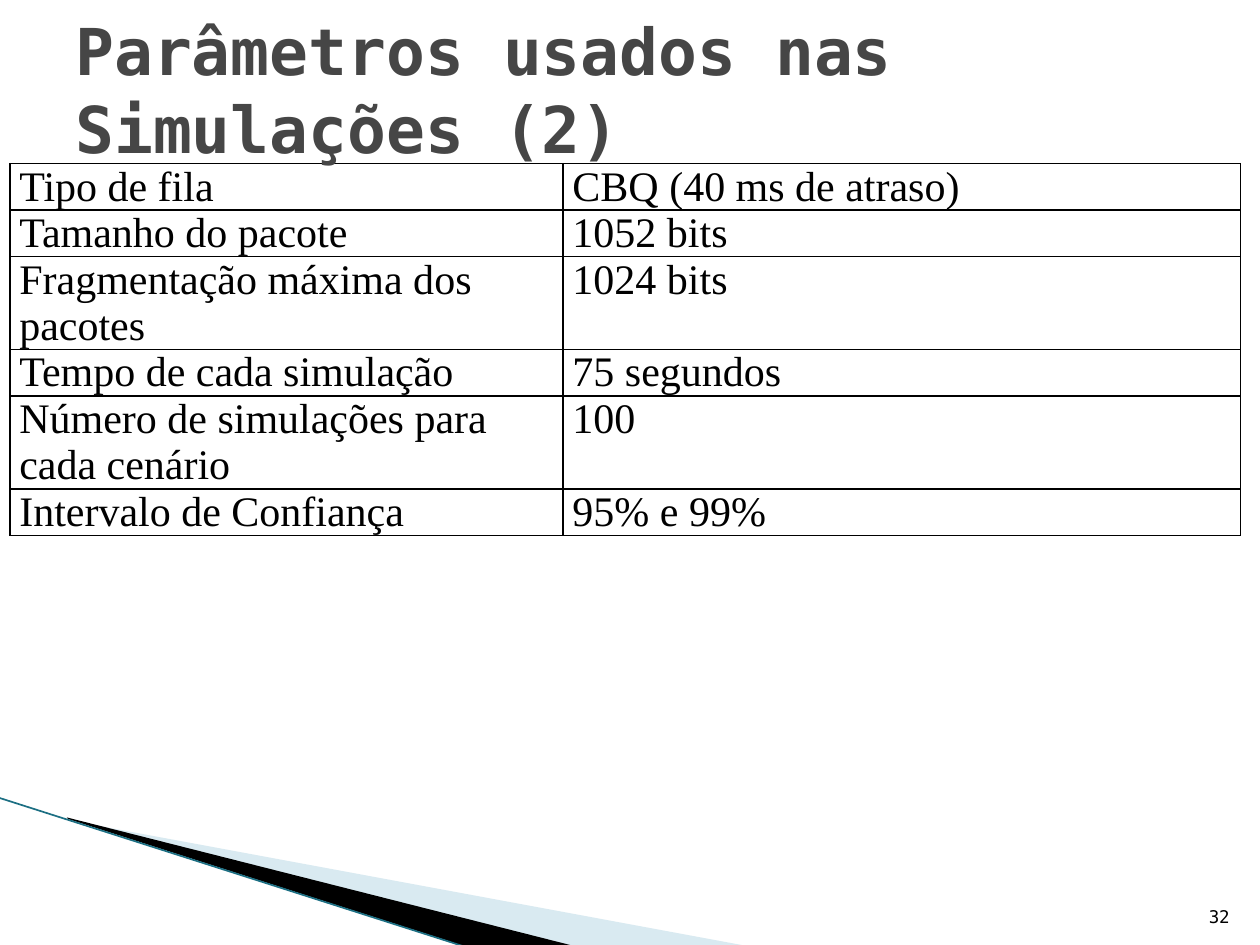
"""Build the slide listing the simulation parameters."""
import dataclasses

import pptx
import pptx.dml.color
import pptx.enum.shapes
import pptx.enum.text
import pptx.oxml
import pptx.oxml.ns
import pptx.util

Cm, Pt = pptx.util.Cm, pptx.util.Pt
RGB = pptx.dml.color.RGBColor.from_string
Anchor, Align = pptx.enum.text.MSO_ANCHOR, pptx.enum.text.PP_ALIGN
qn = pptx.oxml.ns.qn


@dataclasses.dataclass(frozen=True)
class Theme:
    black: str = "000000"
    white: str = "FFFFFF"
    heading: str = "464646"
    pale_blue: str = "A0CBDC"
    edge_teal: str = "1C6F83"
    mono: str = "DejaVu Sans Mono"
    serif: str = "Times New Roman"
    title_size: float = 36.9
    table_size: float = 24
    number_size: float = 10


theme = Theme()


def set_font(paragraph, name, size, color, bold=False):
    font = paragraph.runs[0].font
    font.name, font.size, font.bold = name, Pt(size), bold
    font.color.rgb = RGB(color)


def add_xml(parent, markup):
    namespace = pptx.oxml.ns.nsdecls("a")
    parent.append(pptx.oxml.parse_xml(markup.replace(" ", f" {namespace} ", 1)))


deck = pptx.Presentation()
deck.slide_width, deck.slide_height = Cm(25.4), Cm(19.05)
slide = deck.slides.add_slide(deck.slide_layouts[6])
slide.background.fill.solid()
slide.background.fill.fore_color.rgb = RGB(theme.white)

unit = Cm(0.01)
wedges = [
    (theme.pale_blue, 40, (198, 1389, 1057, 401),
     [(140, 1654), (1511, 1908), (1158, 1908), (140, 1651)]),
    (theme.black, 100, (-15, 1608, 1057, 234),
     [(135, 1648), (1161, 1908), (945, 1910), (137, 1651)]),
]
for color, opacity, (left, top, width, height), corners in wedges:
    outline = slide.shapes.build_freeform(*corners[0], scale=unit)
    outline.add_line_segments(corners[1:], close=True)
    wedge = outline.convert_to_shape()
    wedge.left, wedge.top = left * unit, top * unit
    wedge.width, wedge.height = width * unit, height * unit
    contour = wedge._element.find(".//" + qn("a:pathLst"))[0]
    contour.set("w", str(width))
    contour.set("h", str(height))
    for point, (x, y) in zip(contour.iter(qn("a:pt")), corners):
        point.set("x", str(x - left))
        point.set("y", str(y - top))
    wedge.shadow.inherit = False
    wedge.line.fill.background()
    wedge.fill.solid()
    wedge.fill.fore_color.rgb = RGB(color)
    if opacity < 100:
        tint = wedge.fill._xPr.find(".//" + qn("a:srgbClr"))
        add_xml(tint, f'<a:alpha val="{opacity * 1000}"/>')

edge = slide.shapes.add_connector(
    pptx.enum.shapes.MSO_CONNECTOR.STRAIGHT, Cm(-0.03), Cm(16.08), Cm(9.42), Cm(19.1))
edge.line.color.rgb = RGB(theme.edge_teal)
edge.line.width = Pt(0.95)
add_xml(edge._element.spPr, "<a:effectLst />")

parameters = [
    ("Tipo de fila", "CBQ (40 ms de atraso)", 1),
    ("Tamanho do pacote", "1052 bits", 1),
    ("Fragmentação máxima dos pacotes", "1024 bits", 2),
    ("Tempo de cada simulação", "75 segundos", 1),
    ("Número de simulações para cada cenário", "100", 2),
    ("Intervalo de Confiança", "95% e 99%", 1),
]
line_height = Cm(0.93)
line_total = sum(lines for _, _, lines in parameters)
table = slide.shapes.add_table(
    len(parameters), 2, Cm(0.2), Cm(3.3), Cm(24.81), line_height * line_total).table
table.columns[0].width, table.columns[1].width = Cm(11.15), Cm(13.66)
for row, (label, value, lines) in zip(table.rows, parameters):
    row.height = line_height * lines
    for cell, text in zip(row.cells, (label, value)):
        cell.margin_left = cell.margin_right = Cm(0.19)
        cell.margin_top = cell.margin_bottom = 0
        entry = cell.text_frame.paragraphs[0]
        entry.text = text
        entry.space_after = Pt(4)
        set_font(entry, theme.serif, theme.table_size, theme.black)
        for side in ("lnL", "lnR", "lnT", "lnB"):
            add_xml(cell._tc.get_or_add_tcPr(),
                    f'<a:{side} w="{Pt(1)}"><a:solidFill><a:srgbClr val="{theme.black}"/>'
                    f'</a:solidFill></a:{side}>')
        cell.fill.solid()
        cell.fill.fore_color.rgb = RGB(theme.white)

captions = [
    ("32", (24.02, 17.8, 1.02, 1.02), Anchor.BOTTOM, Align.RIGHT,
     theme.number_size, theme.black, False),
    ("Parâmetros usados nas Simulações (2)", (1.27, 0.2, 22.86, 3.18), Anchor.MIDDLE,
     Align.LEFT, theme.title_size, theme.heading, True),
]
for text, place, anchor, align, size, color, bold in captions:
    frame = slide.shapes.add_textbox(*map(Cm, place)).text_frame
    frame.word_wrap = True
    frame.vertical_anchor = anchor
    frame.text = text
    frame.paragraphs[0].alignment = align
    set_font(frame.paragraphs[0], theme.mono, size, color, bold)

deck.save("out.pptx")
